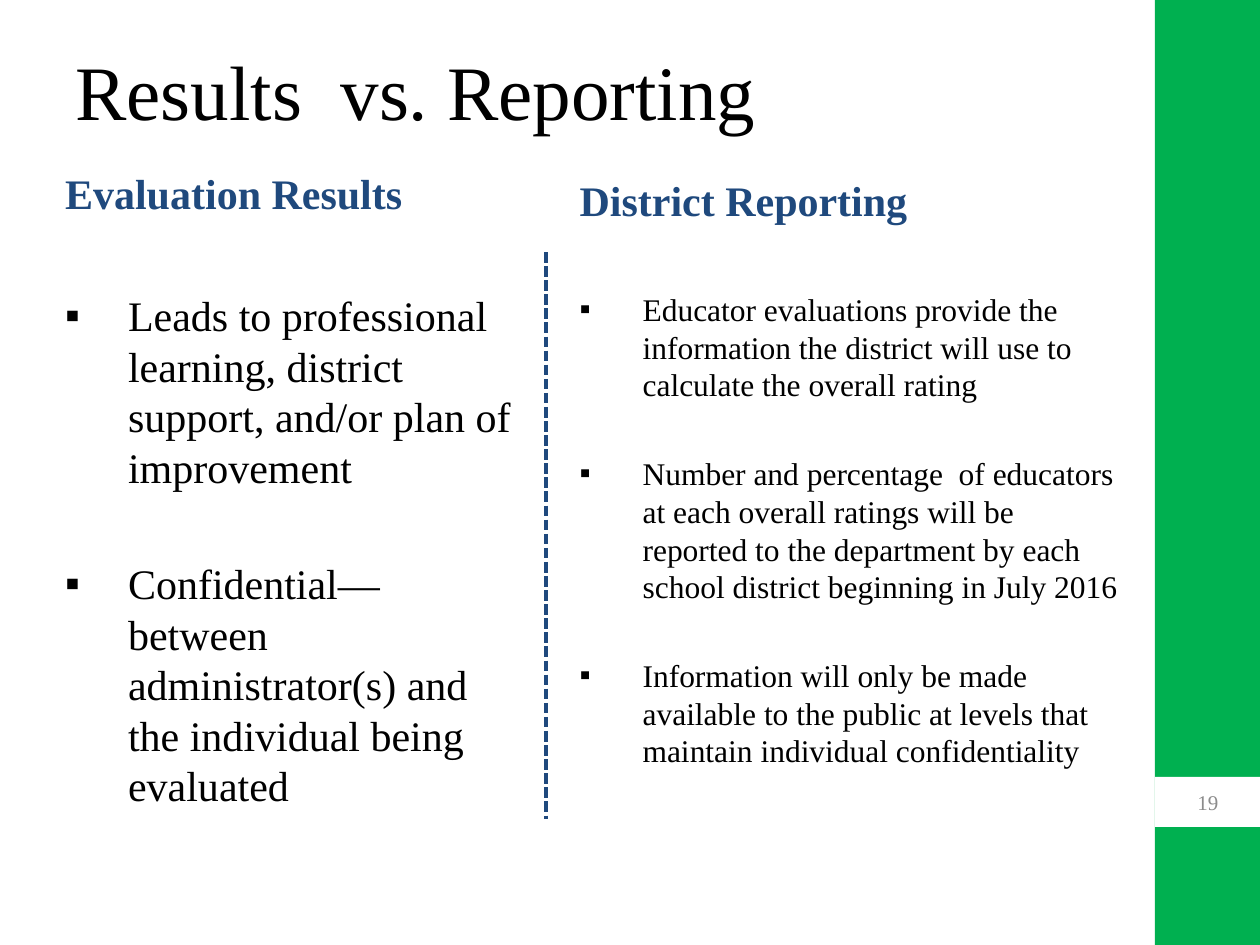
from pptx import Presentation
from pptx.dml.color import RGBColor
from pptx.enum.dml import MSO_LINE
from pptx.enum.shapes import MSO_CONNECTOR, MSO_SHAPE
from pptx.enum.text import MSO_ANCHOR, MSO_AUTO_SIZE, PP_ALIGN
from pptx.oxml.ns import qn
from pptx.util import Pt
from lxml import etree

RECT = MSO_SHAPE.RECTANGLE
STRAIGHT = MSO_CONNECTOR.STRAIGHT
DASH = MSO_LINE.SQUARE_DOT
MIDDLE, BOTTOM = MSO_ANCHOR.MIDDLE, MSO_ANCHOR.BOTTOM
LEFT, CENTER = PP_ALIGN.LEFT, PP_ALIGN.CENTER
NO_FIT = MSO_AUTO_SIZE.NONE

GREEN = RGBColor(0x00, 0xB0, 0x50)
NAVY = RGBColor(0x1F, 0x49, 0x7D)
BLACK = RGBColor(0x00, 0x00, 0x00)
WHITE = RGBColor(0xFF, 0xFF, 0xFF)
GRAY = RGBColor(0x8C, 0x8C, 0x8C)
FONT = "Times New Roman"
COMPARISON = 4
INDENT = 36

RESULTS = [
    "Leads to professional learning, district support, and/or plan of improvement",
    "Confidential—between administrator(s) and the individual being evaluated",
]
REPORTING = [
    "Educator evaluations provide the information the district will use to "
    "calculate the overall rating",
    "Number and percentage  of educators at each overall ratings will be "
    "reported to the department by each school district beginning in July 2016",
    "Information will only be made available to the public at levels that "
    "maintain individual confidentiality",
]


def place(s, box):
    s.left, s.top, s.width, s.height = (Pt(v) for v in box)


def add_run(p, text, size, color, bold=False):
    r = p.add_run()
    r.text = text
    r.font.name = FONT
    r.font.size = Pt(size)
    r.font.bold = bold
    r.font.color.rgb = color


def fill_heading(s, box, text, size, color, anchor, bold=False):
    place(s, box)
    tf = s.text_frame
    tf.auto_size = NO_FIT
    tf.vertical_anchor = anchor
    p = tf.paragraphs[0]
    p.alignment = LEFT
    p.space_before = Pt(0)
    add_run(p, text, size, color, bold)


def set_bullet(p):
    pPr = p._p.get_or_add_pPr()
    pPr.set("marL", str(Pt(INDENT)))
    pPr.set("indent", str(Pt(-INDENT)))
    etree.SubElement(pPr, qn("a:buChar")).set("char", "▪")


def fill_list(s, box, items, size, gap):
    place(s, box)
    tf = s.text_frame
    tf.auto_size = NO_FIT
    for i, item in enumerate(items):
        p = tf.add_paragraph() if i else tf.paragraphs[0]
        set_bullet(p)
        p.space_before = Pt(gap if i else 0)
        add_run(p, item, size, BLACK)


def add_block(slide, box, color):
    s = slide.shapes.add_shape(RECT, *(Pt(v) for v in box))
    s.shadow.inherit = False
    s.fill.solid()
    s.fill.fore_color.rgb = color
    s.line.fill.background()
    return s


def add_divider(slide, x, top, bottom):
    line = slide.shapes.add_connector(STRAIGHT, Pt(x), Pt(top), Pt(x), Pt(bottom))
    line.line.color.rgb = NAVY
    line.line.width = Pt(2)
    line.line.dash_style = DASH
    etree.SubElement(line._element.spPr, qn("a:effectLst"))


def main():
    prs = Presentation()
    prs.slide_width, prs.slide_height = Pt(720), Pt(540)
    slide = prs.slides.add_slide(prs.slide_layouts[COMPARISON])
    title, left_head, left_list, right_head, right_list = slide.placeholders

    # Green side band
    add_block(slide, (660, 0, 60, 540), GREEN)

    # Title and column headings
    fill_heading(title, (36, 0, 594, 102), "Results  vs. Reporting", 44, BLACK, MIDDLE)
    fill_heading(left_head, (30, 78, 300, 50), "Evaluation Results", 24, NAVY, BOTTOM, True)
    fill_heading(right_head, (324, 82, 300, 50), "District Reporting", 24, NAVY, BOTTOM, True)

    # Bulleted columns
    fill_list(left_list, (30, 162, 270, 320), RESULTS, 24, 38)
    fill_list(right_list, (324, 162, 324, 366), REPORTING, 18, 29)

    # Divider between the columns
    add_divider(slide, 312, 144, 468)

    # Slide number
    number = add_block(slide, (660, 444, 60.5, 28.5), WHITE)
    number.text_frame.vertical_anchor = MIDDLE
    p = number.text_frame.paragraphs[0]
    p.alignment = CENTER
    add_run(p, "19", 12, GRAY)

    prs.save("out.pptx")


if __name__ == "__main__":
    main()
